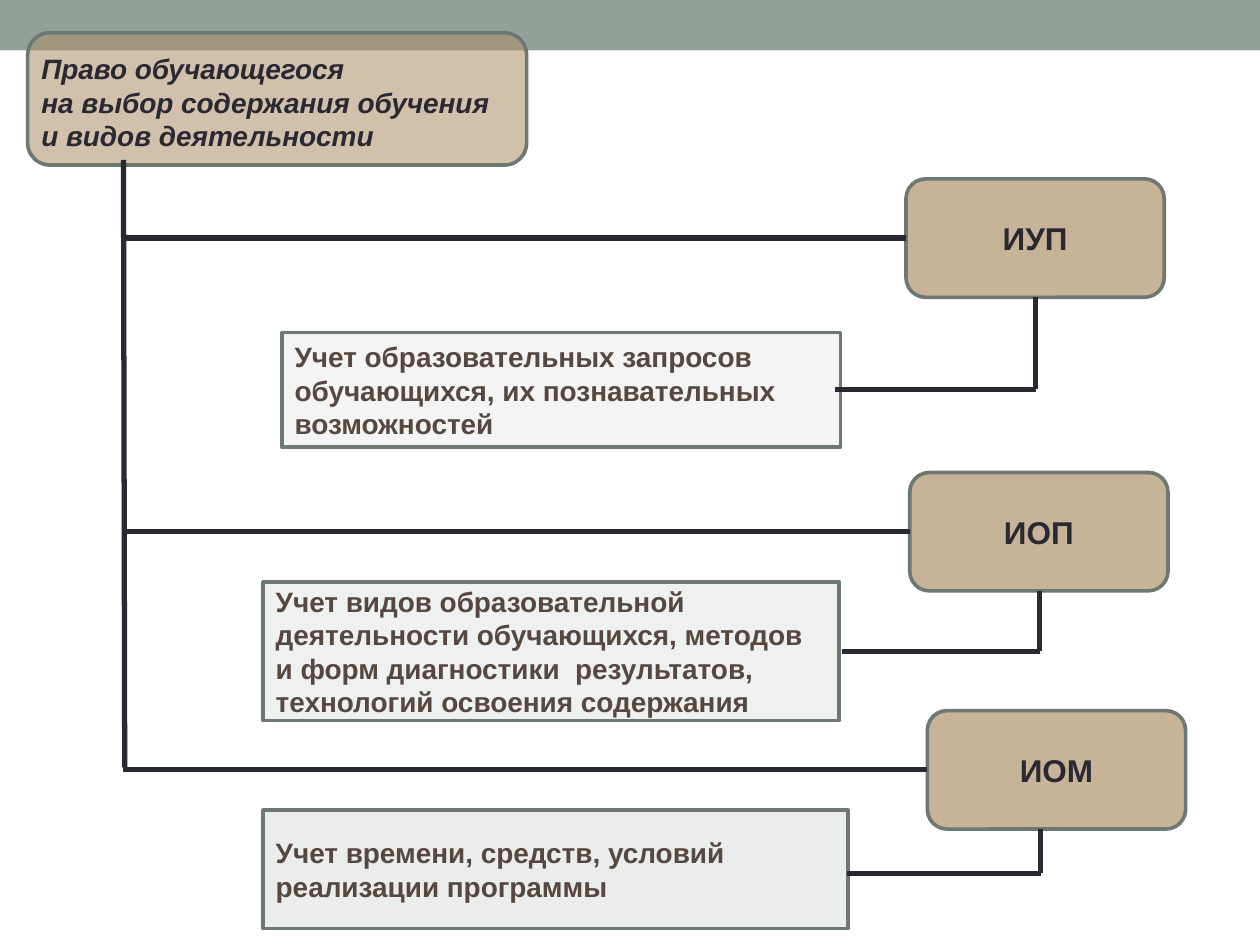
from lxml.etree import SubElement
from pptx import Presentation
from pptx.dml.color import RGBColor
from pptx.enum.shapes import MSO_CONNECTOR, MSO_SHAPE
from pptx.enum.text import MSO_ANCHOR, PP_ALIGN
from pptx.oxml.ns import qn
from pptx.util import Inches, Pt

BAND, SAND, OUTLINE = "93A299", "AD8F67", "6D7871"
DARK, BROWN = "292934", "564841"

RIGHT_TEXT = "Право обучающегося", "на выбор содержания обучения и видов деятельности"
TRUNK_X = 0.98
PLAN_SIZE = 2.05, 0.94

# Each plan: its name and corner, then the note's box, opacity, text,
# and the x positions of the drop line and the note end of the link
PLANS = [
    {"name": "ИУП", "corner": (7.19, 1.42), "note_box": (2.24, 2.64, 4.43, 0.91),
     "opacity": 11, "drop_x": 8.22, "link_x": 6.63, "link_y": 3.09,
     "note": "Учет образовательных запросов обучающихся, их познавательных возможностей"},
    {"name": "ИОП", "corner": (7.22, 3.75), "note_box": (2.09, 4.62, 4.57, 1.1),
     "opacity": 14, "drop_x": 8.25, "link_x": 6.68, "link_y": 5.17,
     "note": "Учет видов образовательной деятельности обучающихся, методов "
             "и форм диагностики  результатов, технологий освоения содержания"},
    {"name": "ИОМ", "corner": (7.36, 5.64), "note_box": (2.09, 6.43, 4.64, 0.94),
     "opacity": 19, "drop_x": 8.26, "link_x": 6.72, "link_y": 6.93,
     "note": "Учет времени, средств, условий реализации программы"},
]


def rgb(hex_color):
    return RGBColor.from_string(hex_color)


def write(shape, paragraphs, color, align=PP_ALIGN.LEFT, anchor=MSO_ANCHOR.MIDDLE, **font_format):
    frame = shape.text_frame
    frame.word_wrap = True
    frame.vertical_anchor = anchor
    for index, text in enumerate(paragraphs):
        paragraph = frame.add_paragraph() if index else frame.paragraphs[0]
        paragraph.alignment = align
        run = paragraph.add_run()
        run.text = text
        run.font.color.rgb = rgb(color)
        for key, value in {"name": "Arial", "bold": True, **font_format}.items():
            setattr(run.font, key, value)


def add_box(slide, kind, box, fill, opacity=100, outlined=True):
    shape = slide.shapes.add_shape(kind, *map(Inches, box))
    shape.shadow.inherit = False
    shape.fill.solid()
    shape.fill.fore_color.rgb = rgb(fill)
    if opacity < 100:
        color = shape.fill._xPr.find(".//" + qn("a:srgbClr"))
        SubElement(color, qn("a:alpha"), val=str(opacity * 1000))
    if outlined:
        shape.line.color.rgb = rgb(OUTLINE)
        shape.line.width = Pt(2.08)
    else:
        shape.line.fill.background()
    return shape


def add_line(slide, start, end):
    line = slide.shapes.add_connector(MSO_CONNECTOR.STRAIGHT, *map(Inches, start + end))
    line.line.color.rgb = rgb(DARK)
    line.line.width = Pt(3)
    SubElement(line._element.spPr, qn("a:effectLst"))


def add_right(slide):
    add_box(slide, MSO_SHAPE.ROUNDED_RECTANGLE, (0.22, 0.26, 3.96, 1.05), SAND, 55)
    label = slide.shapes.add_textbox(*map(Inches, (0.23, 0.36, 3.86, 0.91)))
    write(label, RIGHT_TEXT, DARK, anchor=MSO_ANCHOR.TOP, size=Pt(16), italic=True)


def add_plan(slide, plan):
    left, top = plan["corner"]
    width, height = PLAN_SIZE
    box = add_box(slide, MSO_SHAPE.ROUNDED_RECTANGLE, (left, top, width, height), SAND, 68)
    write(box, [plan["name"]], DARK, PP_ALIGN.CENTER, size=Pt(18))
    note = add_box(slide, MSO_SHAPE.RECTANGLE, plan["note_box"], BAND, plan["opacity"])
    write(note, [plan["note"]], BROWN, size=Pt(16))

    # Branch from the trunk, then the elbow down to the note
    middle = top + height / 2
    corner = plan["drop_x"], plan["link_y"]
    add_line(slide, (TRUNK_X, middle), (left, middle))
    add_line(slide, corner, (plan["drop_x"], top + height))
    add_line(slide, (plan["link_x"], plan["link_y"]), corner)


def main():
    deck = Presentation()
    deck.slide_width, deck.slide_height = Inches(10), Inches(7.5)
    slide = deck.slides.add_slide(deck.slide_layouts[6])

    # Top band and the starting right
    add_box(slide, MSO_SHAPE.RECTANGLE, (0, 0, 10, 0.4), BAND, outlined=False)
    add_right(slide)

    # Plans hanging from the trunk
    for plan in PLANS:
        add_plan(slide, plan)
    add_line(slide, (TRUNK_X, 1.27), (0.99, 6.09))

    deck.save("out.pptx")


if __name__ == "__main__":
    main()
